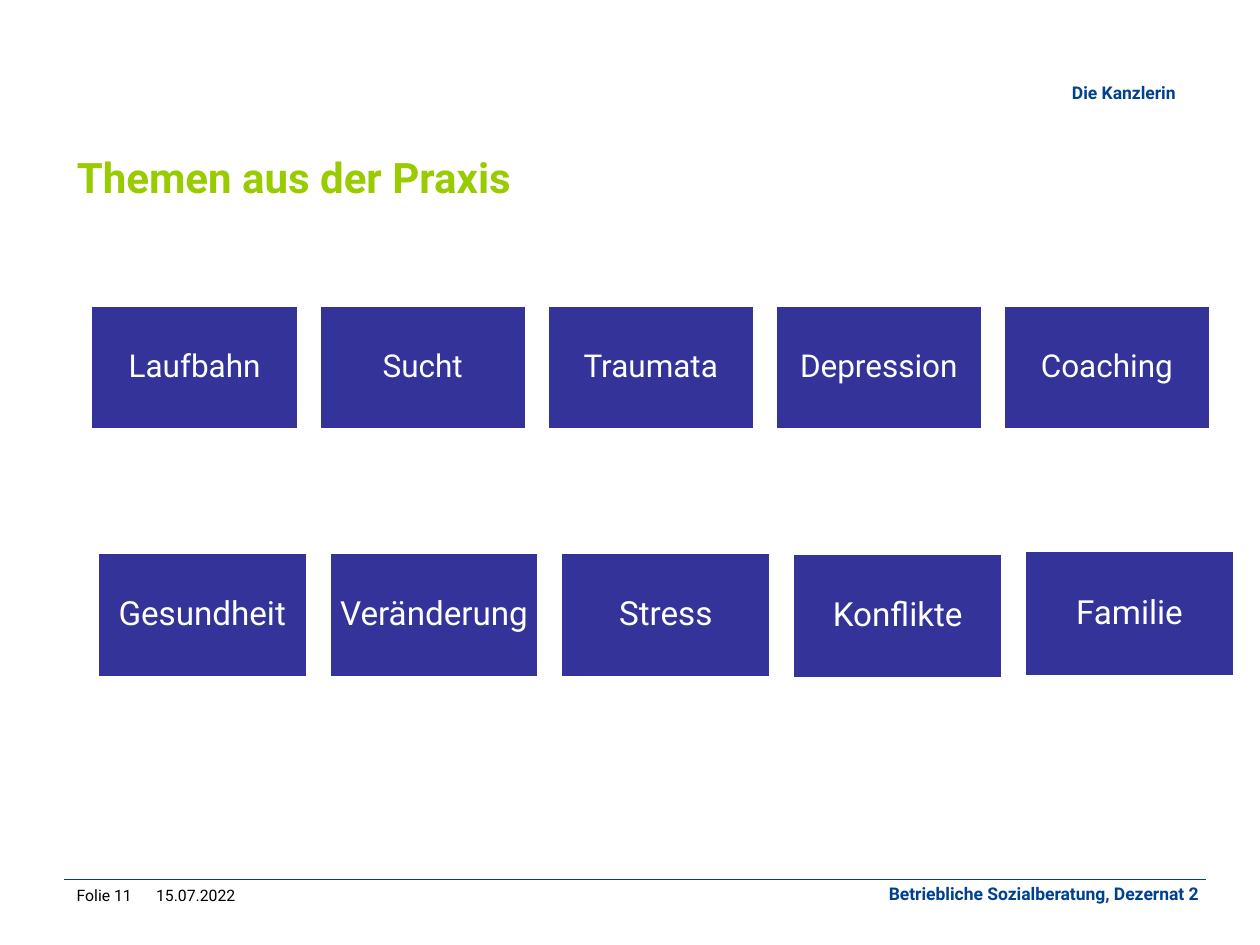
import pptx
import pptx.util
import pptx.dml.color
import pptx.enum.shapes
import pptx.enum.text
from lxml import etree
from pptx.util import Inches

COLORS = {"navy": "00418F", "green": "99CC00", "box": "333399", "white": "FFFFFF", "black": "000000"}
ALIGN = pptx.enum.text.PP_ALIGN
ANCHOR = pptx.enum.text.MSO_ANCHOR
TOPICS_TOP = ["Laufbahn", "Sucht", "Traumata", "Depression", "Coaching"]
TOPICS_BOTTOM = ["Gesundheit", "Veränderung", "Stress", "Konflikte", "Familie"]


def rgb(name):
    """Return the named colour."""
    return pptx.dml.color.RGBColor.from_string(COLORS[name])


def set_text(shape, text, size, color, bold=False, align=ALIGN.LEFT,
             anchor=ANCHOR.TOP, insets=(0.1, 0.05, 0.1, 0.05)):
    """Write one formatted paragraph into a shape."""
    tf = shape.text_frame
    left, top, right, bottom = map(Inches, insets)
    frame = {"word_wrap": True, "auto_size": pptx.enum.text.MSO_AUTO_SIZE.NONE,
             "vertical_anchor": anchor, "margin_left": left, "margin_top": top,
             "margin_right": right, "margin_bottom": bottom}
    for name, value in frame.items():
        setattr(tf, name, value)
    p = tf.paragraphs[0]
    p.alignment = align
    r = p.add_run()
    r.text = text
    for name, value in {"name": "Roboto", "size": pptx.util.Pt(size), "bold": bold}.items():
        setattr(r.font, name, value)
    r.font.color.rgb = rgb(color)
    return p


def add_title(s, text):
    """Place and fill the title placeholder."""
    title = s.shapes.title
    place = {"left": 0.51, "top": 1.12, "width": 9.06, "height": 0.56}
    for name, value in place.items():
        setattr(title, name, Inches(value))
    set_text(title, text, 24, "green", bold=True, anchor=ANCHOR.MIDDLE)


def add_label(s, box, text, size, color, **fmt):
    """Add a text box."""
    set_text(s.shapes.add_textbox(*map(Inches, box)), text, size, color, **fmt)


def add_rule(s, left, right, y):
    """Add the thin line above the footer."""
    line = s.shapes.add_connector(pptx.enum.shapes.MSO_CONNECTOR.STRAIGHT,
                                  Inches(left), Inches(y), Inches(right), Inches(y))
    line.line.color.rgb = rgb("navy")
    line.line.width = pptx.util.Pt(0.75)
    etree.SubElement(line._element.spPr, pptx.oxml.ns.qn("a:effectLst"))


def add_topic(s, box, text, size, inset):
    """Add one topic rectangle."""
    shape = s.shapes.add_shape(pptx.enum.shapes.MSO_SHAPE.RECTANGLE, *map(Inches, box))
    shape.shadow.inherit = False
    shape.fill.solid()
    shape.fill.fore_color.rgb = rgb("box")
    shape.line.color.rgb = rgb("white")
    shape.line.width = pptx.util.Pt(2)
    p = set_text(shape, text, size, "white", align=ALIGN.CENTER,
                 anchor=ANCHOR.MIDDLE, insets=[inset] * 4)
    p.line_spacing = 0.9


def add_topic_row(s, topics, left, tops, pitch, width, height, size, inset):
    """Add a row of evenly spaced topics."""
    for i, (text, top) in enumerate(zip(topics, tops)):
        add_topic(s, (left + i * pitch, top, width, height), text, size, inset)


def main():
    """Build and save the slide."""
    prs = pptx.Presentation()
    prs.slide_width, prs.slide_height = Inches(10), Inches(7.5)
    s = prs.slides.add_slide(prs.slide_layouts[5])
    add_title(s, "Themen aus der Praxis")
    add_rule(s, 0.51, 9.57, 6.98)
    add_label(s, (3.94, 0.35, 5.51, 0.51), "Die Kanzlerin", 10, "navy", bold=True,
              align=ALIGN.RIGHT, anchor=ANCHOR.BOTTOM, insets=(0, 0, 0.12, 0.04))
    add_label(s, (4.49, 6.96, 5.12, 0.51), "Betriebliche Sozialberatung, Dezernat 2",
              10, "navy", bold=True, align=ALIGN.RIGHT)
    add_label(s, (1.14, 6.98, 1.11, 0.52), "15.07.2022", 9, "black")
    add_label(s, (0.51, 6.98, 0.79, 0.52), "Folie 11", 9, "black")
    add_topic_row(s, TOPICS_BOTTOM, 0.77, [4.38, 4.38, 4.38, 4.39, 4.37], 1.84, 1.67, 1, 19, 0.08)
    add_topic_row(s, TOPICS_TOP, 0.72, [2.42] * 5, 1.81, 1.65, 0.99, 18, 0.07)
    prs.save("out.pptx")


if __name__ == "__main__":
    main()
